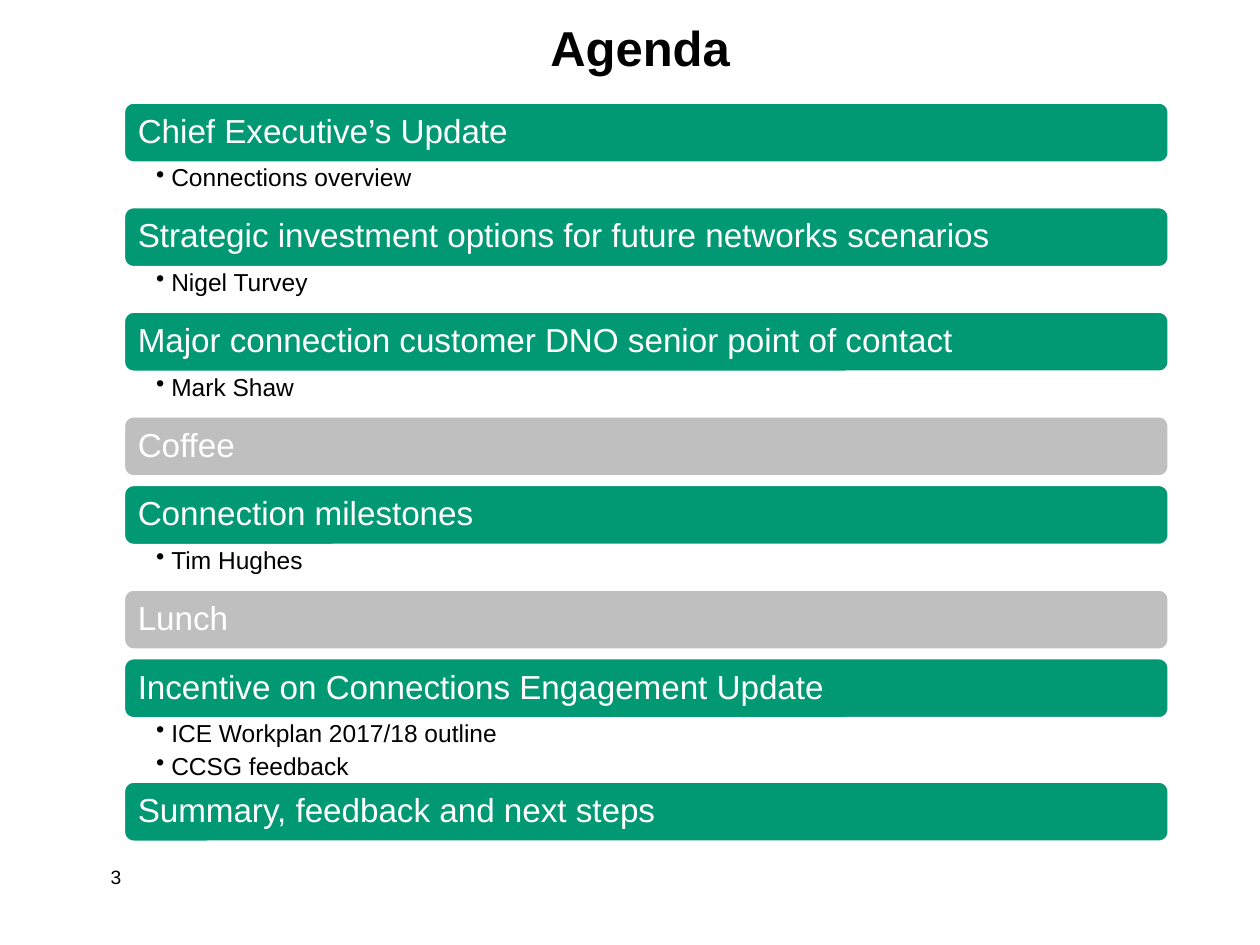
from dataclasses import dataclass

from lxml import etree
from pptx import Presentation
from pptx.dml.color import RGBColor
from pptx.enum.shapes import MSO_SHAPE
from pptx.enum.text import MSO_ANCHOR, PP_ALIGN
from pptx.oxml.ns import qn
from pptx.util import Inches, Pt


@dataclass(frozen=True)
class Theme:
    font: str = "Arial"
    session: RGBColor = RGBColor(0x00, 0x99, 0x73)
    pause: RGBColor = RGBColor(0xBF, 0xBF, 0xBF)
    light: RGBColor = RGBColor(0xFF, 0xFF, 0xFF)
    dark: RGBColor = RGBColor(0x00, 0x00, 0x00)
    title_size: int = 28
    bar_size: int = 19
    note_size: int = 14
    number_size: int = 11


THEME = Theme()
BAR_HEIGHT = Inches(0.485)
BAR_GAP = Inches(0.06)
NOTE_HEIGHTS = {1: Inches(0.345), 2: Inches(0.495)}

AGENDA = [
    ("Chief Executive’s Update", THEME.session, ["Connections overview"]),
    ("Strategic investment options for future networks scenarios", THEME.session, ["Nigel Turvey"]),
    ("Major connection customer DNO senior point of contact", THEME.session, ["Mark Shaw"]),
    ("Coffee", THEME.pause, []),
    ("Connection milestones", THEME.session, ["Tim Hughes"]),
    ("Lunch", THEME.pause, []),
    ("Incentive on Connections Engagement Update", THEME.session,
     ["ICE Workplan 2017/18 outline", "CCSG feedback"]),
    ("Summary, feedback and next steps", THEME.session, []),
]


def format_paragraph(paragraph, size, color, bold=False, alignment=PP_ALIGN.LEFT):
    paragraph.alignment = alignment
    for run in paragraph.runs:
        run.font.name = THEME.font
        run.font.size = Pt(size)
        run.font.bold = bold
        run.font.color.rgb = color


def set_margins(text_frame, left, top, right, bottom):
    text_frame.margin_left = Inches(left)
    text_frame.margin_top = Inches(top)
    text_frame.margin_right = Inches(right)
    text_frame.margin_bottom = Inches(bottom)


def add_bullet(paragraph):
    properties = paragraph._p.get_or_add_pPr()
    properties.set("marL", str(Inches(0.12)))
    properties.set("indent", str(-Inches(0.12)))
    etree.SubElement(properties, qn("a:buChar")).set("char", "•")


def place_title(slide, left, top, width, height):
    title = slide.shapes.title
    title.left, title.top, title.width, title.height = left, top, width, height
    text_frame = title.text_frame
    text_frame.text = "Agenda"
    text_frame.vertical_anchor = MSO_ANCHOR.MIDDLE
    format_paragraph(text_frame.paragraphs[0], THEME.title_size, THEME.dark, True, PP_ALIGN.CENTER)


def add_bar(slide, heading, fill, left, top, width, height):
    bar = slide.shapes.add_shape(MSO_SHAPE.ROUNDED_RECTANGLE, left, top, width, height)
    bar.shadow.inherit = False
    bar.fill.solid()
    bar.fill.fore_color.rgb = fill
    bar.line.color.rgb = THEME.light
    bar.line.width = Pt(2)
    text_frame = bar.text_frame
    text_frame.text = heading
    text_frame.word_wrap = True
    text_frame.vertical_anchor = MSO_ANCHOR.MIDDLE
    set_margins(text_frame, 0.09, 0.08, 0.09, 0.08)
    text_frame.paragraphs[0].line_spacing = 0.9
    format_paragraph(text_frame.paragraphs[0], THEME.bar_size, THEME.light)


def add_notes(slide, notes, left, top, width, height):
    text_frame = slide.shapes.add_textbox(left, top, width, height).text_frame
    text_frame.text = "\n".join(notes)
    text_frame.word_wrap = True
    set_margins(text_frame, 0.26, 0.02, 0.11, 0.02)
    for paragraph in text_frame.paragraphs:
        add_bullet(paragraph)
        paragraph.line_spacing = 0.9
        paragraph.space_after = Pt(3.5)
        format_paragraph(paragraph, THEME.note_size, THEME.dark)


def place_agenda(slide, left, top, width):
    for heading, fill, notes in AGENDA:
        add_bar(slide, heading, fill, left, top, width, BAR_HEIGHT)
        top += BAR_HEIGHT
        if notes:
            height = NOTE_HEIGHTS[len(notes)]
            add_notes(slide, notes, left, top, width, height)
            top += height
        else:
            top += BAR_GAP


def place_page_number(slide, left, top, width, height):
    text_frame = slide.shapes.add_textbox(left, top, width, height).text_frame
    text_frame.text = "3"
    text_frame.word_wrap = True
    format_paragraph(text_frame.paragraphs[0], THEME.number_size, THEME.dark)


def main():
    presentation = Presentation()
    presentation.slide_width = Inches(10)
    presentation.slide_height = Inches(7.5)
    slide = presentation.slides.add_slide(presentation.slide_layouts.get_by_name("Title Only"))
    place_title(slide, Inches(0.83), Inches(-0.01), Inches(8.5), Inches(0.77))
    place_agenda(slide, Inches(0.98), Inches(0.81), Inches(8.3))
    place_page_number(slide, Inches(0.78), Inches(6.82), Inches(2.08), Inches(0.5))
    presentation.save("out.pptx")


if __name__ == "__main__":
    main()
